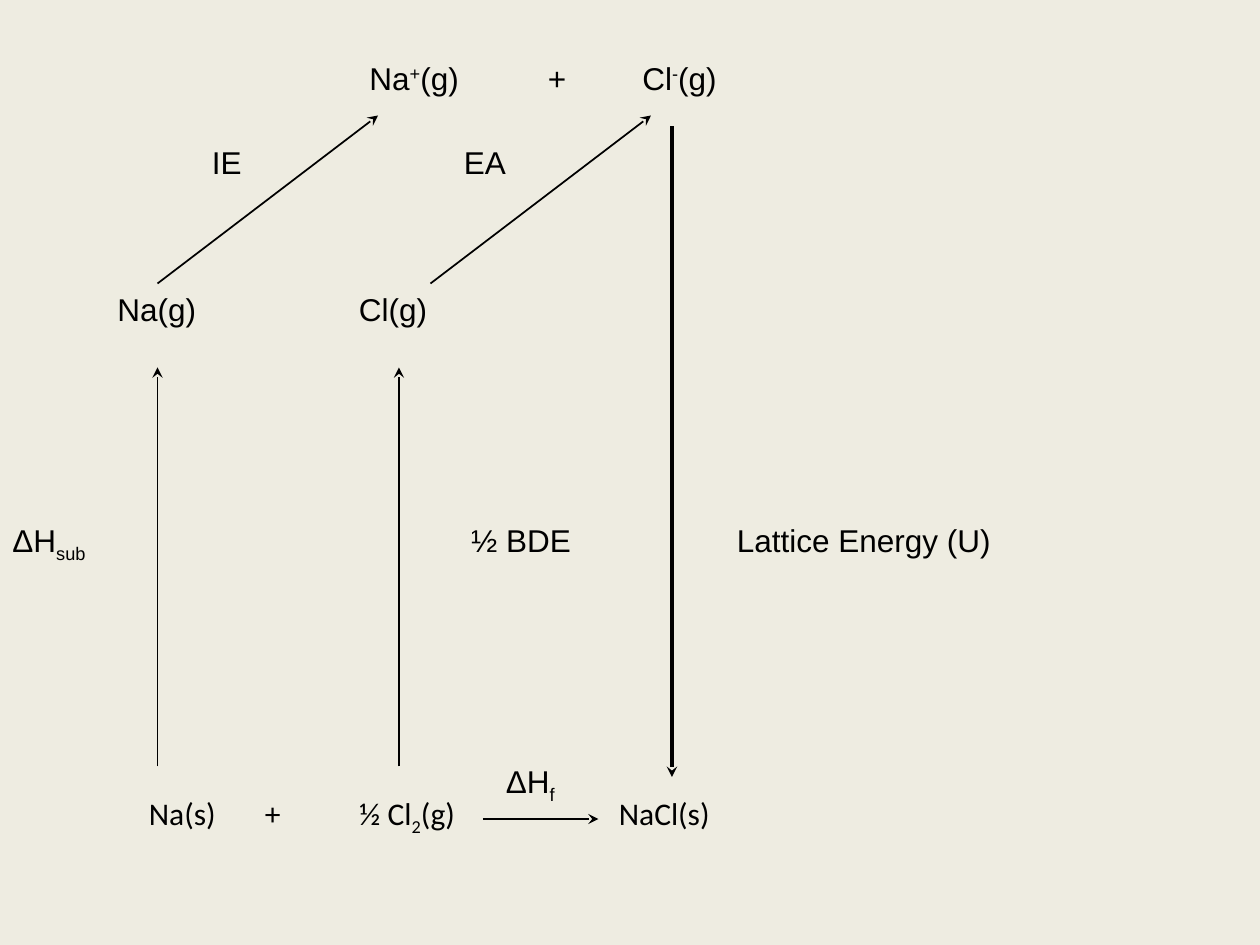
from lxml.etree import SubElement
from pptx import Presentation
from pptx.dml.color import RGBColor
from pptx.enum.shapes import MSO_CONNECTOR as Connector
from pptx.oxml.ns import qn
from pptx.util import Inches, Pt

COLUMNS, ROWS = 120, 90
CELL = Inches(10) // COLUMNS
INK, PAPER = "000000", "EEECE1"
SUB, SUPER = -25000, 30000


def paint(color_format, color):
    """Set a colour from its hex string."""
    color_format.rgb = RGBColor.from_string(color)


def write(slide, text, column, row, columns, rows=6, font="Arial", size=18,
          shift=SUB, indent=0, stops=()):
    """Write a label; text between bars is raised or lowered by shift."""
    label = slide.shapes.add_textbox(*(round(CELL * n) for n in (column, row, columns, rows)))
    label.text_frame.word_wrap = True
    paragraph = label.text_frame.paragraphs[0]
    layout = paragraph._p.get_or_add_pPr()
    layout.set("marL", str(Inches(indent)))
    if stops:
        tabs = SubElement(layout, qn("a:tabLst"))
        for stop in stops:
            SubElement(tabs, qn("a:tab"), pos=str(Inches(stop)), algn="l")
    for index, part in enumerate(text.split("|")):
        run = paragraph.add_run()
        run.text = part
        run.font.name, run.font.size = font, Pt(size)
        paint(run.font.color, INK)
        if index % 2:
            run.font._element.set("baseline", str(shift))


def draw_arrow(slide, start, end, weight=1):
    """Draw a stealth-headed arrow between two grid points."""
    arrow = slide.shapes.add_connector(
        Connector.STRAIGHT, *(CELL * n for n in (*start, *end)))
    paint(arrow.line.fill.fore_color if arrow.line.fill.solid() else arrow.line.color, INK)
    arrow.line.width = Pt(weight)
    SubElement(arrow.line._get_or_add_ln(), qn("a:tailEnd"), type="stealth")
    SubElement(arrow._element.spPr, qn("a:effectLst"))


def draw_steps(slide):
    """Draw the arrows of the energy cycle."""
    for column in (15, 38):
        draw_arrow(slide, (column, 73), (column, 35))
    for column in (15, 41):
        draw_arrow(slide, (column, 27), (column + 21, 11))
    draw_arrow(slide, (46, 78), (57, 78))
    draw_arrow(slide, (64, 12), (64, 74), weight=2)


def write_species(slide):
    """Write the substances at each level of the cycle."""
    write(slide, "Na|+|(g)", 34, 5, 14, shift=SUPER)
    write(slide, "+", 51, 5, 5)
    write(slide, "Cl|-|(g)", 60, 5, 12, shift=SUPER)
    write(slide, "Na(g)", 10, 27, 12.5)
    write(slide, "Cl(g)", 33, 27, 11.2)
    write(slide, "Na(s)\t+\t½ Cl|2|(g)\tNaCl(s)", 13, 75, 82, 4.8,
          font="Calibri", stops=(0.92, 1.67, 3.73))


def write_energies(slide):
    """Write the energy term beside each arrow."""
    write(slide, "IE", 19, 13, 9)
    write(slide, "EA", 43, 13, 9)
    write(slide, "ΔH|sub", 0, 49, 14)
    write(slide, "½ BDE", 42, 49, 14, 10.8, indent=0.14)
    write(slide, "Lattice Energy (U)", 69, 49, 27, 10.8)
    write(slide, "ΔH|f", 47, 72, 14)


def main():
    """Build the Born–Haber cycle slide."""
    deck = Presentation()
    deck.slide_width, deck.slide_height = CELL * COLUMNS, CELL * ROWS
    slide = deck.slides.add_slide(deck.slide_layouts[6])
    slide.background.fill.solid()
    paint(slide.background.fill.fore_color, PAPER)
    draw_steps(slide)
    write_species(slide)
    write_energies(slide)
    deck.save("out.pptx")


if __name__ == "__main__":
    main()
